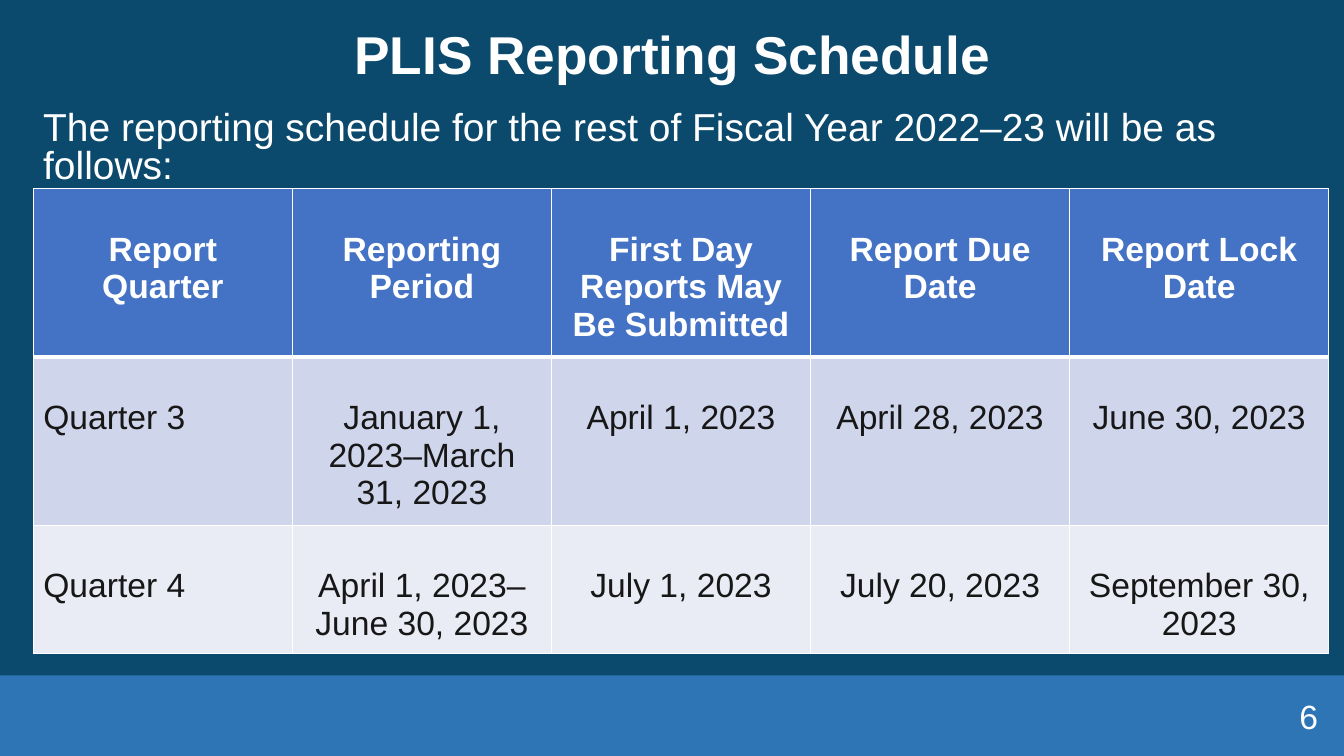
from lxml import etree
from pptx import Presentation
from pptx.dml.color import RGBColor
from pptx.enum.shapes import MSO_SHAPE
from pptx.enum.text import MSO_ANCHOR, PP_ALIGN
from pptx.oxml.ns import qn
from pptx.util import Inches, Pt

LEFT, CENTER, RIGHT = PP_ALIGN.LEFT, PP_ALIGN.CENTER, PP_ALIGN.RIGHT
TOP, MIDDLE = MSO_ANCHOR.TOP, MSO_ANCHOR.MIDDLE

COLORS = {"background": "0C4A6D", "band": "2E75B6", "header": "4472C4",
          "odd": "CFD5EA", "even": "E9EBF5", "white": "FFFFFF", "ink": "181717"}
FONT = "Arial"
W, H = 13.33, 7.5
BAND_H = 0.8

# text, (left, top, width, height), anchor, font, paragraph format
TEXTS = [
    ("PLIS Reporting Schedule", (0.17, -0.16, 13, 1.45), MIDDLE,
     {"size": Pt(38), "bold": True}, {"alignment": CENTER, "line_spacing": 0.9}),
    ("The reporting schedule for the rest of Fiscal Year 2022–23 will be as follows:",
     (0.33, 1.06, 12.62, 0.91), TOP,
     {"size": Pt(27.8)}, {"line_spacing": 0.8, "space_before": Pt(10)}),
    ("6", (10.17, 6.9, 3, 0.4), MIDDLE, {"size": Pt(24)}, {"alignment": RIGHT}),
]

SCHEDULE = [
    ["Report Quarter", "Reporting Period", "First Day Reports May Be Submitted",
     "Report Due Date", "Report Lock Date"],
    ["Quarter 3", "January 1, 2023–March 31, 2023", "April 1, 2023",
     "April 28, 2023", "June 30, 2023"],
    ["Quarter 4", "April 1, 2023–June 30, 2023", "July 1, 2023",
     "July 20, 2023", "September 30, 2023"],
]
TABLE_LEFT, TABLE_TOP = 0.33, 1.87
COL_W, ROW_H = 2.57, [1.61, 1.61, 1.23]
CELL_TOP_MARGIN = 0.42


def rgb(name):
    return RGBColor.from_string(COLORS[name])


def write(tf, text, color, font, para):
    p = tf.paragraphs[0]
    for key, value in para.items():
        setattr(p, key, value)
    r = p.add_run()
    r.text = text
    r.font.name = FONT
    r.font.color.rgb = rgb(color)
    for key, value in font.items():
        setattr(r.font, key, value)


def add_borders(cell, widths):
    tc_pr = cell._tc.get_or_add_tcPr()
    for side, width in zip("LRTB", widths):
        ln = etree.SubElement(tc_pr, qn(f"a:ln{side}"), w=str(Pt(width)))
        fill = etree.SubElement(ln, qn("a:solidFill"))
        etree.SubElement(fill, qn("a:srgbClr"), val=COLORS["white"])


def add_schedule(s):
    n_cols = len(SCHEDULE[0])
    box = (TABLE_LEFT, TABLE_TOP, COL_W * n_cols, sum(ROW_H))
    table = s.shapes.add_table(len(SCHEDULE), n_cols, *map(Inches, box)).table
    for col in table.columns:
        col.width = Inches(COL_W)
    for i, (row, height) in enumerate(zip(SCHEDULE, ROW_H)):
        table.rows[i].height = Inches(height)
        header = i == 0
        for j, text in enumerate(row):
            cell = table.cell(i, j)
            add_borders(cell, (1, 1, 3 if i == 1 else 1, 3 if header else 1))
            cell.fill.solid()
            cell.fill.fore_color.rgb = rgb(("header", "odd", "even")[i])
            cell.margin_top = Inches(CELL_TOP_MARGIN)
            write(cell.text_frame, text, "white" if header else "ink",
                  {"size": Pt(24), "bold": header},
                  {"alignment": CENTER if header or j else LEFT})


def main():
    prs = Presentation()
    prs.slide_width, prs.slide_height = Inches(W), Inches(H)
    s = prs.slides.add_slide(prs.slide_layouts[6])
    s.background.fill.solid()
    s.background.fill.fore_color.rgb = rgb("background")

    band = s.shapes.add_shape(MSO_SHAPE.RECTANGLE,
                              *map(Inches, (0, H - BAND_H, W, BAND_H)))
    band.shadow.inherit = False
    band.fill.solid()
    band.fill.fore_color.rgb = rgb("band")
    band.line.fill.background()

    for text, box, anchor, font, para in TEXTS:
        tf = s.shapes.add_textbox(*map(Inches, box)).text_frame
        tf.word_wrap = True
        tf.vertical_anchor = anchor
        write(tf, text, "white", font, para)

    add_schedule(s)
    prs.save("out.pptx")


if __name__ == "__main__":
    main()
